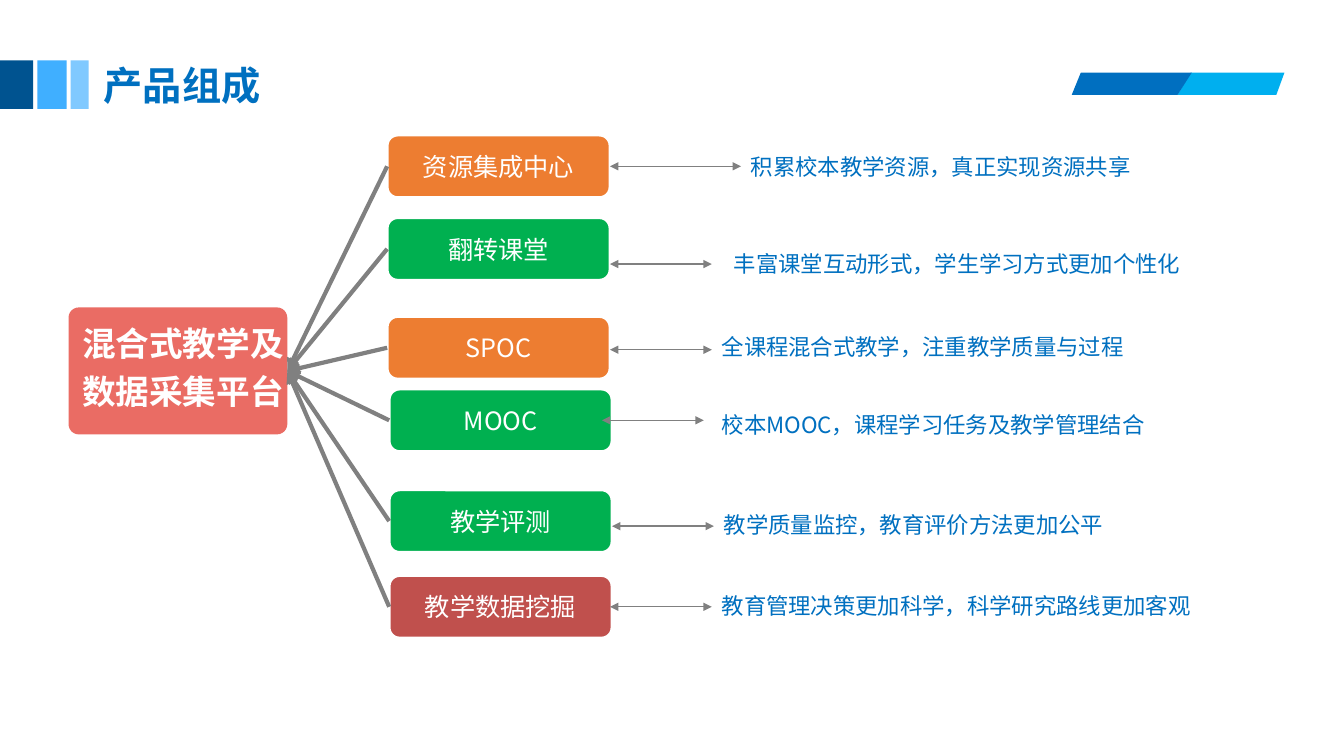
from lxml.etree import SubElement
from pptx import Presentation
from pptx.dml.color import RGBColor
from pptx.enum.shapes import MSO_CONNECTOR, MSO_SHAPE
from pptx.enum.text import MSO_ANCHOR, MSO_AUTO_SIZE, PP_ALIGN
from pptx.oxml.ns import qn
from pptx.util import Inches, Pt

FONT = "Noto Sans CJK SC"
COLORS = {
    "white": "FFFFFF", "blue": "0070C0", "gray": "808080",
    "coral": "EA6C64", "orange": "ED7D31", "green": "00B050", "red": "C0504D",
    "cyan": "00AFEF", "band": "006FC0",
    "dark": "005390", "mid": "40AFFF", "light": "80C9FF",
}


def write(sp, text, size, color, bold=False, align=PP_ALIGN.LEFT, anchor=MSO_ANCHOR.TOP):
    """Put one paragraph in a shape and return the paragraph."""
    tf = sp.text_frame
    tf.word_wrap = True
    tf.auto_size = MSO_AUTO_SIZE.NONE
    tf.vertical_anchor = anchor
    p = tf.paragraphs[0]
    p.text = text
    p.alignment = align
    p.font.name = FONT
    p.font.size = Pt(size)
    p.font.bold = bold
    p.font.color.rgb = RGBColor.from_string(COLORS[color])
    SubElement(p._p.pPr.find(qn("a:defRPr")), qn("a:ea"), typeface=FONT)
    return p


def add_arrow(x1, y1, x2, y2, width, ends):
    line = s.shapes.add_connector(
        MSO_CONNECTOR.STRAIGHT, Inches(x1), Inches(y1), Inches(x2), Inches(y2))
    line.line.color.rgb = RGBColor.from_string(COLORS["gray"])
    line.line.width = Pt(width)
    for end in ends:
        SubElement(line.line._get_or_add_ln(), qn(f"a:{end}"), type="triangle")
    SubElement(line._element.spPr, qn("a:effectLst"))


prs = Presentation()
prs.slide_width, prs.slide_height = Inches(13.33), Inches(7.5)
s = prs.slides.add_slide(prs.slide_layouts[5])

title = s.shapes.title
title.left, title.top = Inches(0.93), Inches(0.56)
title.width, title.height = Inches(9.04), Inches(0.57)
write(title, "产品组成", 28, "blue", bold=True)

# Slanted bands at the top right
bands = [
    ("cyan", [(11.81, 0.72), (11.68, 0.94), (12.66, 0.94), (12.74, 0.72)]),
    ("band", [(11.82, 0.72), (10.72, 0.72), (10.63, 0.94), (11.68, 0.94)]),
]
for color, points in bands:
    points = [(Inches(x), Inches(y)) for x, y in points]
    builder = s.shapes.build_freeform(*points[0], scale=1.0)
    builder.add_line_segments(points[1:], close=True)
    sp = builder.convert_to_shape()
    sp.shadow.inherit = False
    sp.fill.solid()
    sp.fill.fore_color.rgb = RGBColor.from_string(COLORS[color])
    sp.line.fill.background()

# Bars beside the title
for color, left, width in [("light", 0.7, 0.18), ("mid", 0.37, 0.29), ("dark", 0, 0.33)]:
    bar = s.shapes.add_shape(
        MSO_SHAPE.RECTANGLE, Inches(left), Inches(0.6), Inches(width), Inches(0.48))
    bar.shadow.inherit = False
    bar.fill.solid()
    bar.fill.fore_color.rgb = RGBColor.from_string(COLORS[color])
    bar.line.fill.background()

# Platform
hub = s.shapes.add_shape(
    MSO_SHAPE.ROUNDED_RECTANGLE, Inches(0.68), Inches(3.05), Inches(2.17), Inches(1.26))
hub.adjustments[0] = 0.081
hub.shadow.inherit = False
hub.fill.solid()
hub.fill.fore_color.rgb = RGBColor.from_string(COLORS["coral"])
hub.line.fill.background()
hub_text = s.shapes.add_textbox(Inches(0.68), Inches(3.07), Inches(2.27), Inches(1.03))
p = write(hub_text, "混合式教学及数据采集平台", 24, "white", bold=True, align=PP_ALIGN.CENTER)
p.line_spacing = 1.2

# Modules: name, colour, left, top, note, note left, note top, arrow from, to, y
modules = [
    ("资源集成中心", "orange", 3.84, 1.34,
     "积累校本教学资源，真正实现资源共享", 7.35, 1.47, 7.35, 6.05, 1.65),
    ("翻转课堂", "green", 3.84, 2.16,
     "丰富课堂互动形式，学生学习方式更加个性化", 7.18, 2.43, 7.06, 6.05, 2.62),
    ("SPOC", "orange", 3.84, 3.14,
     "全课程混合式教学，注重教学质量与过程", 7.06, 3.26, 7.06, 6.05, 3.47),
    ("MOOC", "green", 3.86, 3.86,
     "校本MOOC，课程学习任务及教学管理结合", 7.06, 4.03, 6.98, 5.97, 4.17),
    ("教学评测", "green", 3.86, 4.86,
     "教学质量监控，教育评价方法更加公平", 7.08, 5.02, 7.08, 6.07, 5.22),
    ("教学数据挖掘", "red", 3.86, 5.71,
     "教育管理决策更加科学，科学研究路线更加客观", 7.06, 5.83, 7.06, 6.05, 6.02),
]
for name, color, left, top, note, note_left, note_top, x1, x2, y in modules:
    box = s.shapes.add_shape(
        MSO_SHAPE.ROUNDED_RECTANGLE, Inches(left), Inches(top), Inches(2.21), Inches(0.62))
    box.shadow.inherit = False
    box.fill.solid()
    box.fill.fore_color.rgb = RGBColor.from_string(COLORS[color])
    box.line.color.rgb = RGBColor.from_string(COLORS["white"])
    box.line.width = Pt(2)
    write(box, name, 18, "white", align=PP_ALIGN.CENTER, anchor=MSO_ANCHOR.MIDDLE)
    add_arrow(left, top + 0.31, 2.85, 3.68, 3, ["tailEnd"])
    note_box = s.shapes.add_textbox(
        Inches(note_left), Inches(note_top), Inches(4.9), Inches(0.37))
    write(note_box, note, 16, "blue")
    add_arrow(x1, y, x2, y, 1, ["headEnd", "tailEnd"])

prs.save("out.pptx")
